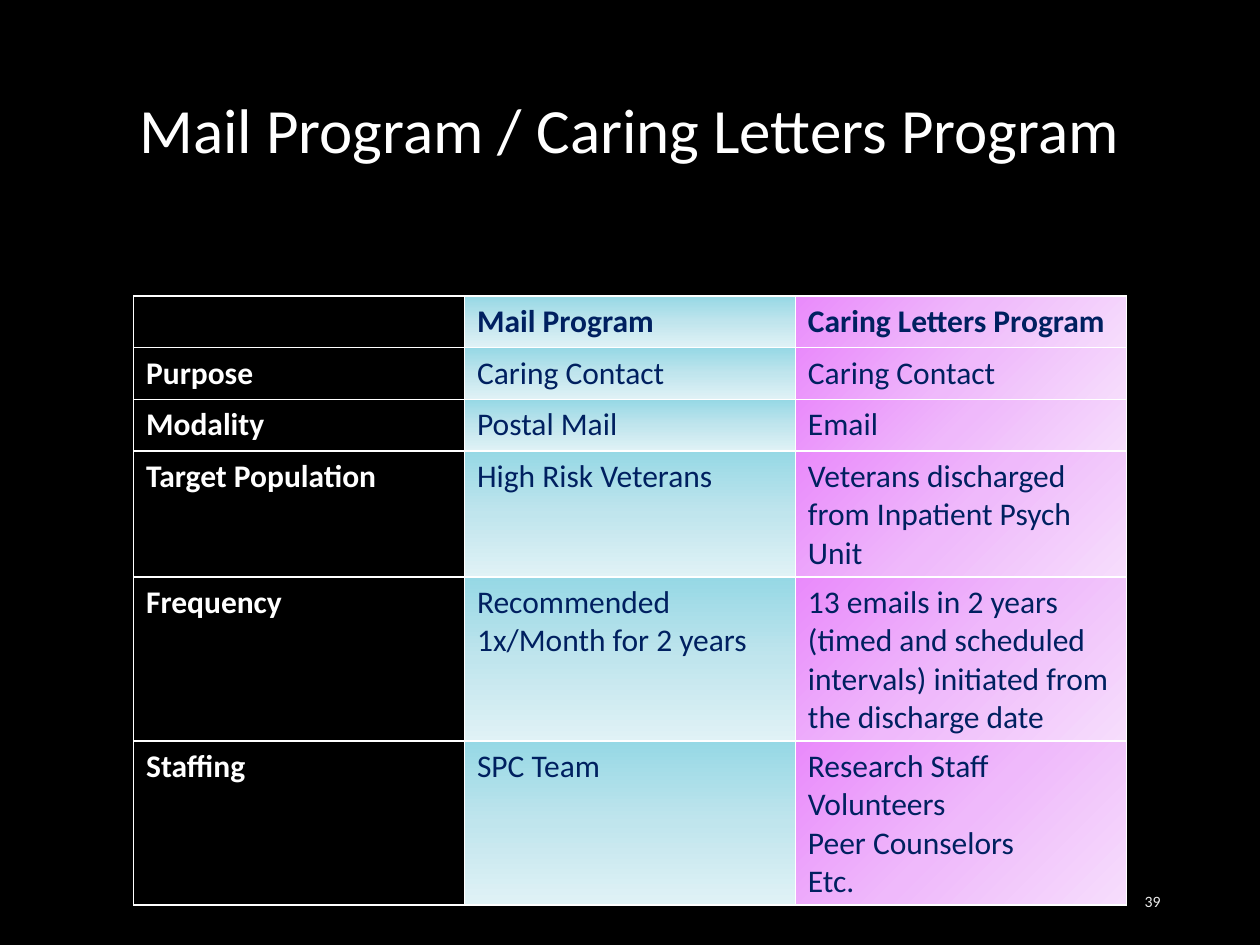
from dataclasses import dataclass

from lxml.etree import SubElement
from pptx import Presentation
from pptx.dml.color import RGBColor
from pptx.enum.text import MSO_ANCHOR as Anchor, PP_ALIGN as Align
from pptx.oxml.ns import qn
from pptx.util import Inches, Pt


@dataclass(frozen=True)
class Gradient:
    """Colour stops as (percent, colour) and a clockwise angle in degrees."""
    stops: tuple
    angle: int


@dataclass(frozen=True)
class Theme:
    """Colours, font and type sizes of the slide."""
    font: str = "Calibri"
    background: str = "000000"
    light: str = "FFFFFF"
    dark: str = "002060"
    border_width: int = 1
    title_size: int = 36
    table_size: int = 18
    number_size: int = 9
    mail: Gradient = Gradient(((0, "96D8E5"), (50, "C0E5ED"), (100, "E0F2F6")), 90)
    letters: Gradient = Gradient(((0, "E98AFB"), (50, "EFB9FB"), (100, "F6DDFC")), 45)
    number: Gradient = Gradient(((0, "9E9E9E"), (28, "EDEDED"), (100, "FFFFFF")), 90)


THEME = Theme()

ROWS = (
    ("", "Mail Program", "Caring Letters Program"),
    ("Purpose", "Caring Contact", "Caring Contact"),
    ("Modality", "Postal Mail", "Email"),
    ("Target Population", "High Risk Veterans",
     "Veterans discharged from Inpatient Psych Unit"),
    ("Frequency", "Recommended 1x/Month for 2 years",
     "13 emails in 2 years (timed and scheduled intervals) initiated from the discharge date"),
    ("Staffing", "SPC Team", "Research Staff\nVolunteers\nPeer Counselors\nEtc."),
)


def apply_fill(fill, owner, paint):
    """Fill with a gradient, a solid colour, or nothing."""
    if paint is None:
        fill.background()
    elif isinstance(paint, Gradient):
        fill.gradient()
        fill.gradient_angle = 360 - paint.angle
        stop_list = owner.find(".//" + qn("a:gsLst"))
        stop_list.clear()
        for percent, color in paint.stops:
            stop = SubElement(stop_list, qn("a:gs"), pos=str(percent * 1000))
            SubElement(stop, qn("a:srgbClr"), val=color)
    else:
        fill.solid()
        fill.fore_color.rgb = RGBColor.from_string(paint)


def write_text(frame, text, *, size, color, bold=False, align=Align.LEFT, spacing=None):
    """Write each line of text as a formatted paragraph."""
    frame.word_wrap = True
    frame.text = text
    for paragraph in frame.paragraphs:
        paragraph.alignment = align
        if spacing:
            paragraph.line_spacing = spacing
        paragraph.font.size = Pt(size)
        for run in paragraph.runs:
            run.font.name = THEME.font
            run.font.size = Pt(size)
            run.font.bold = bold
            apply_fill(run.font.fill, run.font._element, color)


def add_text(slide, text, left, top, width, height, **text_format):
    """Add a vertically centred text box."""
    shape = slide.shapes.add_textbox(
        Inches(left), Inches(top), Inches(width), Inches(height))
    shape.text_frame.vertical_anchor = Anchor.MIDDLE
    write_text(shape.text_frame, text, **text_format)


def add_borders(cell):
    """Draw a thin line on all four sides of a cell."""
    properties = cell._tc.get_or_add_tcPr()
    for side in ("lnL", "lnR", "lnT", "lnB"):
        line = SubElement(properties, qn(f"a:{side}"), w=str(Pt(THEME.border_width)))
        solid = SubElement(line, qn("a:solidFill"))
        SubElement(solid, qn("a:srgbClr"), val=THEME.light)


def add_comparison(slide, rows, left, top, width, row_height):
    """Add the program comparison with one fill per column."""
    paints = (None, THEME.mail, THEME.letters)
    table = slide.shapes.add_table(
        len(rows), len(paints), Inches(left), Inches(top),
        Inches(width), Inches(row_height * len(rows))).table
    for row_index, row in enumerate(rows):
        table.rows[row_index].height = Inches(row_height)
        for column_index, text in enumerate(row):
            cell = table.cell(row_index, column_index)
            is_label = column_index == 0
            add_borders(cell)
            apply_fill(cell.fill, cell._tc.tcPr, paints[column_index])
            write_text(cell.text_frame, text, size=THEME.table_size,
                       color=THEME.light if is_label else THEME.dark,
                       bold=is_label or row_index == 0)


def main():
    """Build and save the slide."""
    presentation = Presentation()
    presentation.slide_width, presentation.slide_height = Inches(10), Inches(7.5)
    slide = presentation.slides.add_slide(presentation.slide_layouts[6])
    apply_fill(slide.background.fill, slide._element, THEME.background)
    add_text(slide, "Mail Program / Caring Letters Program", 0.75, 0.5, 8.49, 1.12,
             size=THEME.title_size, color=THEME.light, align=Align.CENTER, spacing=0.9)
    add_comparison(slide, ROWS, 1.06, 2.35, 7.88, 0.41)
    add_text(slide, "39", 7.06, 6.95, 2.25, 0.4,
             size=THEME.number_size, color=THEME.number, align=Align.RIGHT)
    presentation.save("out.pptx")


if __name__ == "__main__":
    main()
